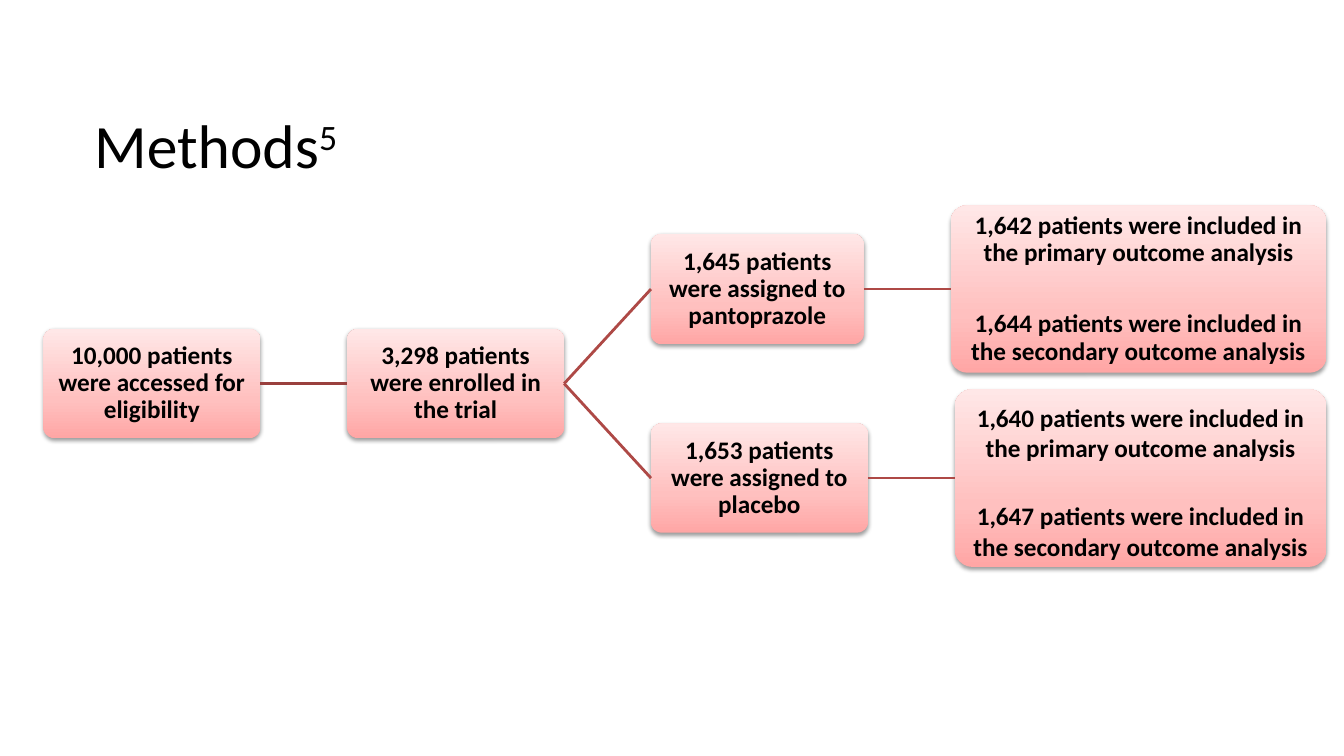
"""Build the Methods slide: a patient flow from eligibility to outcome analysis."""
from lxml import etree
from pptx import Presentation
from pptx.dml.color import RGBColor
from pptx.enum.shapes import MSO_CONNECTOR, MSO_SHAPE
from pptx.enum.text import MSO_ANCHOR, PP_ALIGN
from pptx.oxml import parse_xml
from pptx.oxml.ns import nsdecls, qn
from pptx.util import Pt

STRAIGHT = MSO_CONNECTOR.STRAIGHT
ROUND_RECT = MSO_SHAPE.ROUNDED_RECTANGLE
MIDDLE, BOTTOM = MSO_ANCHOR.MIDDLE, MSO_ANCHOR.BOTTOM
LEFT, CENTER = PP_ALIGN.LEFT, PP_ALIGN.CENTER

FONT, BLACK = "Calibri", "000000"
STOPS = [(0, "FFA6A5"), (35, "FFC0BF"), (100, "FFE7E7")]
LEFT_EDGE, GAP, MIDLINE, BRANCH = 31, 62, 274, 67.5
LEFT_SITE, RIGHT_SITE = 1, 3

TITLE = [("Methods", None), ("5", "30000")]

# name: (parent, branch, width, height, line spacing, paragraph gap, top inset, paragraphs)
STEPS = {
    "eligible": (None, 0, 155, 78, 0.9, 0, 3,
                 ["10,000 patients were accessed for eligibility"]),
    "enrolled": ("eligible", 0, 155, 78, 0.9, 0, 3,
                 ["3,298 patients were enrolled in the trial"]),
    "pantoprazole": ("enrolled", -1, 152, 79, 0.9, 0, 3,
                     ["1,645 patients were assigned to pantoprazole"]),
    "pantoprazole outcomes": ("pantoprazole", -1, 268.5, 119.5, 0.9, 31.5, 3,
                              ["1,642 patients were included in the primary outcome analysis",
                               "1,644 patients were included in the secondary outcome analysis"]),
    "placebo": ("enrolled", 1, 155, 78, 0.9, 0, 3,
                ["1,653 patients were assigned to placebo"]),
    "placebo outcomes": ("placebo", 1, 265.5, 127, 1.0, 27.5, 8,
                         ["1,640 patients were included in the primary outcome analysis",
                          "1,647 patients were included in the secondary outcome analysis"]),
}


def rgb(value):
    return RGBColor.from_string(value)


def set_font(r, size, bold=False):
    r.font.name, r.font.size, r.font.bold = FONT, Pt(size), bold
    r.font.color.rgb = rgb(BLACK)


def style_box(sp):
    sp.adjustments[0] = 0.1
    sp.line.fill.background()
    sp.shadow.inherit = False
    stops = "".join(f'<a:gs pos="{pos * 1000}"><a:srgbClr val="{rgb(color)}"/></a:gs>'
                    for pos, color in STOPS)
    spPr = sp._element.spPr
    spPr.find(qn("a:prstGeom")).addnext(parse_xml(
        f'<a:gradFill {nsdecls("a")} rotWithShape="1"><a:gsLst>{stops}</a:gsLst>'
        '<a:lin ang="16200000" scaled="0"/></a:gradFill>'))
    spPr.find(qn("a:effectLst")).append(parse_xml(
        f'<a:outerShdw {nsdecls("a")} blurRad="{Pt(3.1)}" dist="{Pt(1.6)}" dir="5400000" '
        f'rotWithShape="0"><a:srgbClr val="{rgb(BLACK)}"><a:alpha val="38000"/>'
        '</a:srgbClr></a:outerShdw>'))


def add_box(slide, left, middle, width, height, spacing, gap, top_inset, texts):
    sp = slide.shapes.add_shape(ROUND_RECT, Pt(left), Pt(middle - height / 2),
                                Pt(width), Pt(height))
    style_box(sp)
    tf = sp.text_frame
    tf.word_wrap, tf.vertical_anchor = True, MIDDLE
    tf.margin_left = tf.margin_right = tf.margin_bottom = Pt(3)
    tf.margin_top = Pt(top_inset)
    tf.text = "\n".join(texts)
    for i, p in enumerate(tf.paragraphs):
        p.alignment, p.line_spacing = CENTER, spacing
        if i:
            p.space_before = Pt(gap)
        set_font(p.runs[0], 18, True)
    return sp


def link(slide, start, end, color):
    line = slide.shapes.add_connector(STRAIGHT, 0, 0, 0, 0)
    line.begin_connect(start, RIGHT_SITE)
    line.end_connect(end, LEFT_SITE)
    line.line.color.rgb, line.line.width = rgb(color), Pt(2)
    etree.SubElement(line._element.spPr, qn("a:effectLst"))


def add_title(slide):
    title = slide.shapes.title
    title.left, title.top, title.width, title.height = Pt(60), Pt(42), Pt(354), Pt(91.5)
    tf = title.text_frame
    tf.vertical_anchor = BOTTOM
    p = tf.paragraphs[0]
    p.alignment, p.line_spacing = LEFT, 0.9
    for text, baseline in TITLE:
        r = p.add_run()
        r.text = text
        set_font(r, 44)
        if baseline:
            r.font._element.set("baseline", baseline)


def main():
    prs = Presentation()
    prs.slide_width, prs.slide_height = Pt(960), Pt(540)
    slide = prs.slides.add_slide(prs.slide_layouts[5])
    add_title(slide)
    boxes, right_edges = {}, {}
    for name, (parent, branch, width, *rest) in STEPS.items():
        left = right_edges[parent] + GAP if parent else LEFT_EDGE
        boxes[name] = add_box(slide, left, MIDLINE + branch * BRANCH, width, *rest)
        right_edges[name] = left + width
        if parent:
            link(slide, boxes[parent], boxes[name], "AE4946" if branch else "9A403E")
    prs.save("out.pptx")


if __name__ == "__main__":
    main()
